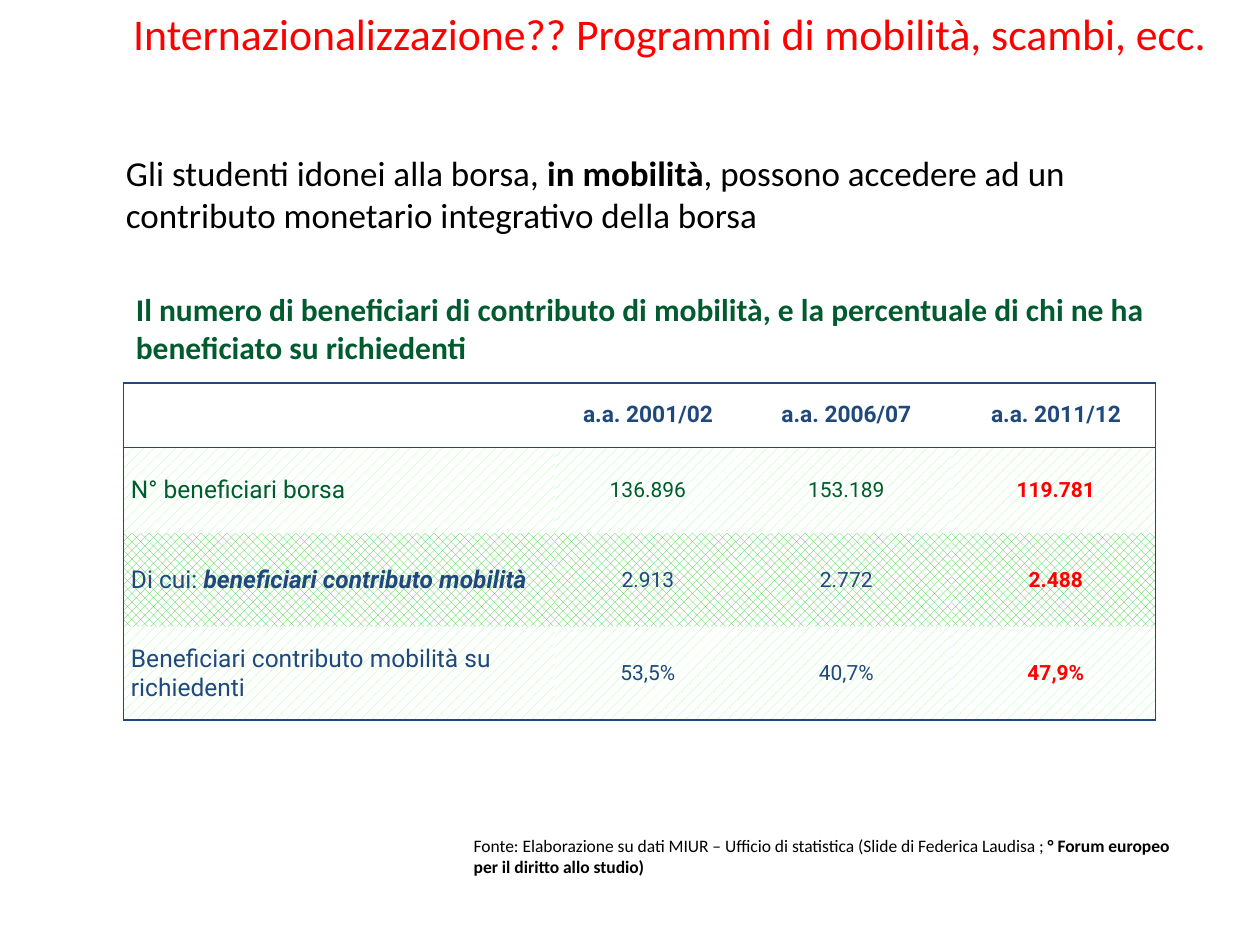
"""Build the slide on mobility grants for students."""
from lxml import etree
from pptx import Presentation
from pptx.dml.color import RGBColor
from pptx.enum.dml import MSO_PATTERN
from pptx.enum.text import MSO_ANCHOR, MSO_AUTO_SIZE, PP_ALIGN
from pptx.oxml.ns import qn
from pptx.util import Cm, Pt

RED = RGBColor(0xFF, 0x00, 0x00)
BLACK = RGBColor(0x00, 0x00, 0x00)
WHITE = RGBColor(0xFF, 0xFF, 0xFF)
NAVY = RGBColor(0x1F, 0x49, 0x7D)
FOREST = RGBColor(0x00, 0x5C, 0x2E)
PALE_GREEN = RGBColor(0x99, 0xFF, 0x99)
BRIGHT_GREEN = RGBColor(0x33, 0xCC, 0x33)

LEFT, CENTER, RIGHT = PP_ALIGN.LEFT, PP_ALIGN.CENTER, PP_ALIGN.RIGHT
TOP, MIDDLE = MSO_ANCHOR.TOP, MSO_ANCHOR.MIDDLE
NO_AUTOFIT = MSO_AUTO_SIZE.NONE
LIGHT_DOTS, DENSE_DOTS = MSO_PATTERN.PERCENT_20, MSO_PATTERN.PERCENT_50

TITLE_ONLY = 5
COLUMN_WIDTHS = (8.69, 3.66, 4.34, 4.11)
ROW_HEIGHTS = (1.3, 1.73, 1.88, 1.88)
YEARS = ("a.a. 2001/02", "a.a. 2006/07", "a.a. 2011/12")
GRANT_ROWS = (
    ("N° beneficiari borsa", "", ("136.896", "153.189", "119.781"),
     FOREST, LIGHT_DOTS, PALE_GREEN),
    ("Di cui: ", "beneficiari contributo mobilità", ("2.913", "2.772", "2.488"),
     NAVY, DENSE_DOTS, BRIGHT_GREEN),
    ("Beneficiari contributo mobilità su richiedenti", "", ("53,5%", "40,7%", "47,9%"),
     NAVY, LIGHT_DOTS, PALE_GREEN),
)


def add_text(paragraph, text, size, color=BLACK, font="Calibri",
             bold=False, italic=False, align=LEFT):
    """Append a formatted run to a paragraph."""
    paragraph.alignment = align
    run = paragraph.add_run()
    run.text = text
    run.font.name = font
    run.font.size = Pt(size)
    run.font.bold = bold
    run.font.italic = italic
    run.font.color.rgb = color


def add_title(slide, text):
    """Place the title along the top edge."""
    title = slide.shapes.title
    title.left, title.top, title.width, title.height = Cm(1.7), Cm(0), Cm(22.86), Cm(1.19)
    frame = title.text_frame
    frame.auto_size = NO_AUTOFIT
    frame.vertical_anchor = TOP
    add_text(frame.paragraphs[0], text, 25, color=RED, align=RIGHT)


def add_note(slide, left, top, width, height):
    """Add a wrapping text box and return its paragraph."""
    frame = slide.shapes.add_textbox(Cm(left), Cm(top), Cm(width), Cm(height)).text_frame
    frame.word_wrap = True
    return frame.paragraphs[0]


def set_borders(cell, visible):
    """Draw the visible sides of a cell and clear the others."""
    properties = cell._tc.get_or_add_tcPr()
    for position, side in enumerate("LRTB"):
        line = etree.Element(qn(f"a:ln{side}"), w=str(Pt(1)))
        if side in visible:
            fill = etree.SubElement(line, qn("a:solidFill"))
            etree.SubElement(fill, qn("a:srgbClr"), val=str(NAVY))
        else:
            etree.SubElement(line, qn("a:noFill"))
        properties.insert(position, line)


def format_cell(cell, pattern=None, tint=WHITE):
    """Set the margins, anchor and fill of a cell and return its paragraph."""
    cell.margin_left = Cm(0.15)
    cell.margin_right = cell.margin_top = cell.margin_bottom = Cm(0.05)
    cell.vertical_anchor = MIDDLE
    if pattern is None:
        cell.fill.solid()
        cell.fill.fore_color.rgb = tint
    else:
        cell.fill.patterned()
        cell.fill.pattern = pattern
        cell.fill.fore_color.rgb = tint
        cell.fill.back_color.rgb = WHITE
    return cell.text_frame.paragraphs[0]


def add_grants_table(slide):
    """Add the table of grant holders by academic year."""
    last_row, last_column = len(ROW_HEIGHTS) - 1, len(COLUMN_WIDTHS) - 1
    table = slide.shapes.add_table(
        len(ROW_HEIGHTS), len(COLUMN_WIDTHS), Cm(2.49), Cm(7.72),
        Cm(sum(COLUMN_WIDTHS)), Cm(sum(ROW_HEIGHTS))).table
    table.first_row = table.horz_banding = False
    for column, width in zip(table.columns, COLUMN_WIDTHS):
        column.width = Cm(width)
    for row, height in zip(table.rows, ROW_HEIGHTS):
        row.height = Cm(height)

    format_cell(table.cell(0, 0))
    for column, year in enumerate(YEARS, 1):
        add_text(format_cell(table.cell(0, column)), year, 13,
                 color=NAVY, font="Roboto", bold=True, align=CENTER)
    for row, (label, emphasis, counts, color, pattern, tint) in enumerate(GRANT_ROWS, 1):
        heading = format_cell(table.cell(row, 0), pattern, tint)
        add_text(heading, label, 14, color=color, font="Roboto")
        if emphasis:
            add_text(heading, emphasis, 14, color=color, font="Roboto", bold=True, italic=True)
        for column, count in enumerate(counts, 1):
            latest = column == last_column
            add_text(format_cell(table.cell(row, column), pattern, tint), count, 12,
                     color=RED if latest else color, font="Roboto", bold=latest, align=CENTER)

    for row in range(last_row + 1):
        for column in range(last_column + 1):
            sides = {"L": column == 0, "R": column == last_column,
                     "T": row in (0, 1), "B": row in (0, last_row)}
            set_borders(table.cell(row, column), [side for side in sides if sides[side]])


def main():
    """Build and save the slide."""
    deck = Presentation()
    deck.slide_width, deck.slide_height = Cm(25.4), Cm(19.05)
    slide = deck.slides.add_slide(deck.slide_layouts[TITLE_ONLY])
    add_title(slide, "Internazionalizzazione?? Programmi di mobilità, scambi, ecc.")

    source = add_note(slide, 9.3, 16.71, 14.81, 1.55)
    add_text(source, "Fonte: Elaborazione su dati MIUR – Ufficio di statistica "
                     "(Slide di Federica Laudisa ; ", 10)
    add_text(source, "° Forum europeo per il diritto allo studio)", 10, bold=True)

    add_grants_table(slide)

    eligibility = add_note(slide, 2.29, 2.92, 20.02, 1.96)
    add_text(eligibility, "Gli studenti idonei alla borsa, ", 20)
    add_text(eligibility, "in mobilità", 20, bold=True)
    add_text(eligibility, ", possono accedere ad un contributo monetario "
                          "integrativo della borsa", 20)

    caption = add_note(slide, 2.49, 5.72, 21.01, 1.8)
    add_text(caption, "Il numero di beneficiari di contributo di mobilità, e la percentuale "
                      "di chi ne ha beneficiato su richiedenti", 18, color=FOREST, bold=True)
    deck.save("out.pptx")


if __name__ == "__main__":
    main()
